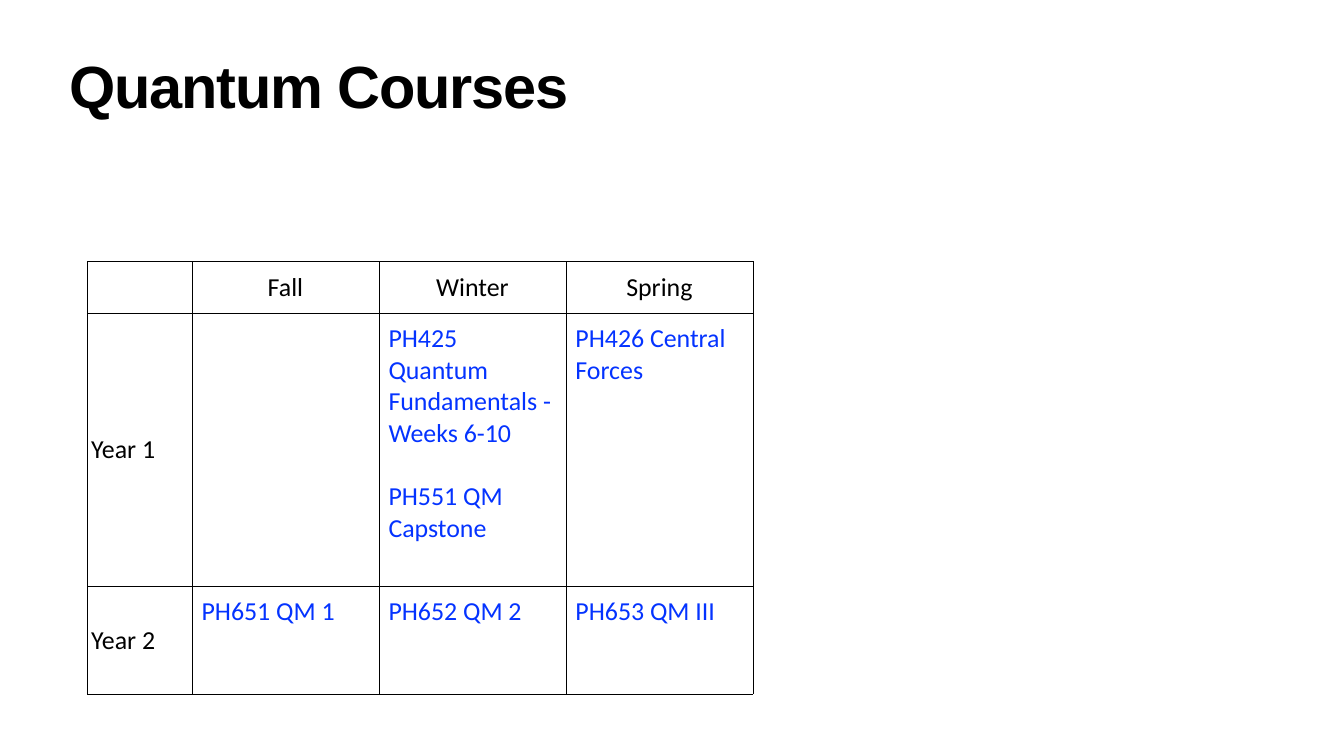
from lxml.etree import SubElement
from pptx import Presentation
from pptx.dml.color import RGBColor
from pptx.enum.text import MSO_ANCHOR as ANCHOR, PP_ALIGN as ALIGN
from pptx.oxml.ns import qn
from pptx.util import Inches, Pt

# Content: each cell is a list of paragraphs
TITLE = "Quantum Courses"
ROWS = [
    [[], ["Fall"], ["Winter"], ["Spring"]],
    [["Year 1"], [],
     ["PH425 Quantum Fundamentals - Weeks 6-10", "PH551 QM Capstone"],
     ["PH426 Central Forces"]],
    [["Year 2"], ["PH651 QM 1"], ["PH652 QM 2"], ["PH653 QM III"]],
]
COL_WIDTHS = [2.07, 3.71, 3.71, 3.71]
ROW_HEIGHTS = [1.03, 5.42, 2.13]

COLORS = {"text": "000000", "course": "0433FF", "border": "000000"}
LABEL = {"margin_left": Inches(0.07), "margin_right": Inches(0.07),
         "margin_top": 0, "margin_bottom": 0,
         "vertical_anchor": ANCHOR.MIDDLE}
COURSE = {f"margin_{side}": Inches(0.19)
          for side in ("left", "right", "top", "bottom")}
COURSE["vertical_anchor"] = ANCHOR.TOP
PARAGRAPH_GAP = Pt(45)


def set_attrs(obj, values):
    for name, value in values.items():
        setattr(obj, name, value)


def add_run(p, text, color, **font):
    r = p.add_run()
    r.text = text
    set_attrs(r.font, font)
    r.font.color.rgb = RGBColor.from_string(COLORS[color])
    return r


def add_borders(cell):
    tc_pr = cell._tc.get_or_add_tcPr()
    for i, side in enumerate(("lnL", "lnR", "lnT", "lnB")):
        ln = tc_pr.makeelement(qn(f"a:{side}"), {"w": str(Pt(1))})
        fill = SubElement(ln, qn("a:solidFill"))
        SubElement(fill, qn("a:srgbClr"), val=COLORS["border"])
        tc_pr.insert(i, ln)


prs = Presentation()
prs.slide_width, prs.slide_height = Inches(26.67), Inches(15)
s = prs.slides.add_slide(prs.slide_layouts[5])  # blank apart from its title

# Title
sp = s.shapes.title
set_attrs(sp, {"left": Inches(1.32), "top": Inches(1.18),
               "width": Inches(24.03), "height": Inches(1.57)})
tf = sp.text_frame
set_attrs(tf, {"word_wrap": True, "vertical_anchor": ANCHOR.TOP})
set_attrs(tf, {f"margin_{side}": Inches(0.06)
               for side in ("left", "right", "top", "bottom")})
p = tf.paragraphs[0]
set_attrs(p, {"alignment": ALIGN.LEFT, "line_spacing": 0.8})
r = add_run(p, TITLE, "text", name="Arial", size=Pt(85), bold=True)
r.font._element.set("spc", "-170")

# Course table
table = s.shapes.add_table(
    len(ROWS), len(COL_WIDTHS), Inches(1.74), Inches(5.19),
    Inches(sum(COL_WIDTHS)), Inches(sum(ROW_HEIGHTS))).table
set_attrs(table, {"first_row": False, "horz_banding": False})
for col, width in zip(table.columns, COL_WIDTHS):
    col.width = Inches(width)
for row, height in zip(table.rows, ROW_HEIGHTS):
    row.height = Inches(height)

for i, row in enumerate(ROWS):
    for j, texts in enumerate(row):
        cell = table.cell(i, j)
        is_label = i == 0 or j == 0
        set_attrs(cell, LABEL if is_label else COURSE)
        cell.fill.background()
        add_borders(cell)
        tf = cell.text_frame
        for k, text in enumerate(texts):
            p = tf.add_paragraph() if k else tf.paragraphs[0]
            p.alignment = ALIGN.CENTER if i == 0 else ALIGN.LEFT
            if k:
                p.space_before = PARAGRAPH_GAP
            add_run(p, text, "text" if is_label else "course",
                    name="Calibri", size=Pt(37))

prs.save("out.pptx")
